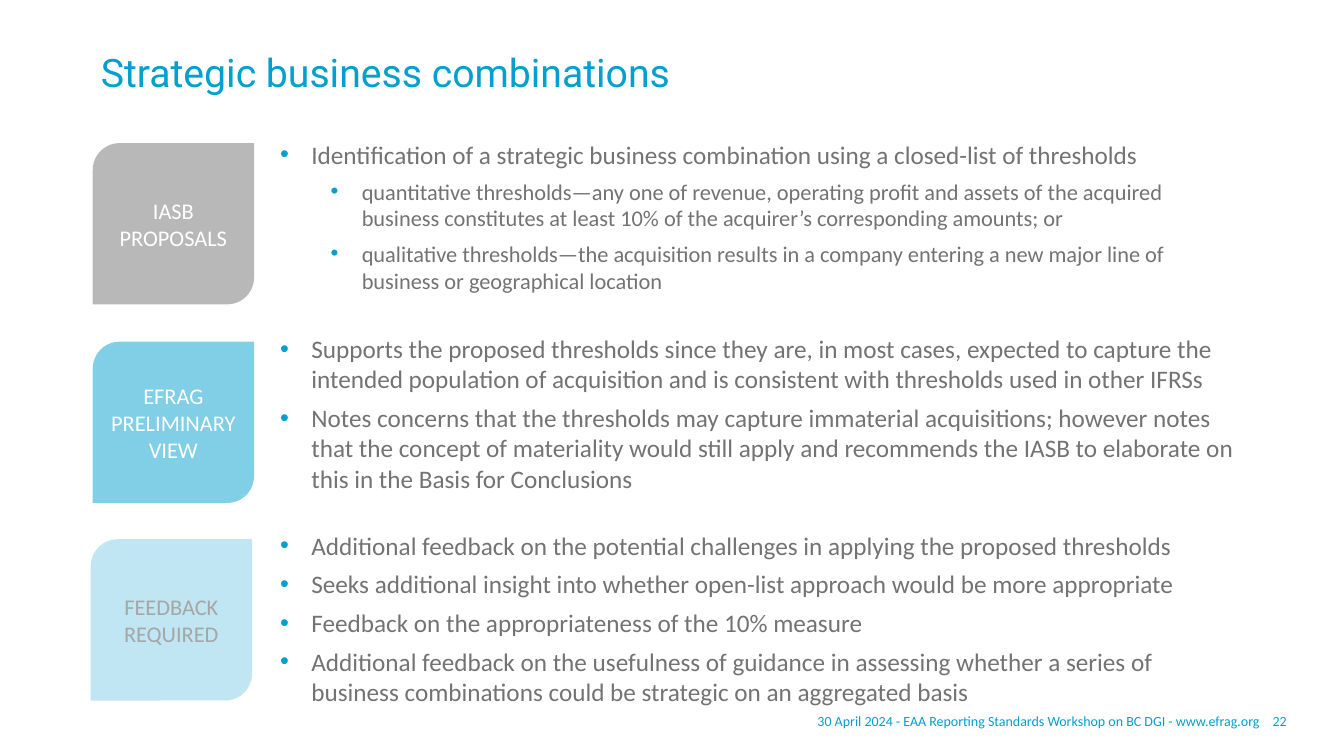
import pptx
import pptx.util
import pptx.dml.color
import pptx.enum.shapes
import pptx.enum.text
import pptx.oxml
import pptx.oxml.ns
import lxml.etree

Inches = pptx.util.Inches
Pt = pptx.util.Pt
RGBColor = pptx.dml.color.RGBColor
Align = pptx.enum.text.PP_ALIGN
Anchor = pptx.enum.text.MSO_ANCHOR
AutoSize = pptx.enum.text.MSO_AUTO_SIZE
qn = pptx.oxml.ns.qn

BLUE = RGBColor(0x02, 0xA0, 0xCE)
LIGHT_BLUE = RGBColor(0x80, 0xCF, 0xE6)
GREY = RGBColor(0x73, 0x73, 0x74)
PALE_GREY = RGBColor(0xA6, 0xA6, 0xA6)
WHITE = RGBColor(0xFF, 0xFF, 0xFF)

TITLE = "Strategic business combinations"
FOOTER = ["30 April 2024 - EAA Reporting Standards Workshop on BC DGI - ", "www.efrag.org"]
PAGE_NUMBER = "22"
SECTIONS = [
    {
        "label": ["IASB PROPOSALS"], "fill": GREY, "ink": WHITE,
        "tile": (0.92, 1.42), "body": (1.33, 9.21, 1.65),
        "bullets": [
            (0, "Identification of a strategic business combination using a closed-list of thresholds"),
            (1, "quantitative thresholds—any one of revenue, operating profit and assets of the acquired "
                "business constitutes at least 10% of the acquirer’s corresponding amounts; or"),
            (1, "qualitative thresholds—the acquisition results in a company entering a new major line of "
                "business or geographical location"),
        ],
    },
    {
        "label": ["EFRAG PRELIMINARY", "VIEW"], "fill": BLUE, "ink": WHITE,
        "tile": (0.92, 3.39), "body": (3.26, 9.72, 1.7),
        "bullets": [
            (0, "Supports the proposed thresholds since they are, in most cases, expected to capture the "
                "intended population of acquisition and is consistent with thresholds used in other IFRSs"),
            (0, "Notes concerns that the thresholds may capture immaterial acquisitions; however notes "
                "that the concept of materiality would still apply and recommends the IASB to elaborate on "
                "this in the Basis for Conclusions"),
        ],
    },
    {
        "label": ["FEEDBACK REQUIRED"], "fill": LIGHT_BLUE, "ink": PALE_GREY,
        "tile": (0.9, 5.35), "body": (5.21, 9.58, 1.87),
        "bullets": [
            (0, "Additional feedback on the potential challenges in applying the proposed thresholds"),
            (0, "Seeks additional insight into whether open-list approach would be more appropriate"),
            (0, "Feedback on the appropriateness of the 10% measure"),
            (0, "Additional feedback on the usefulness of guidance in assessing whether a series of "
                "business combinations could be strategic on an aggregated basis"),
        ],
    },
]

TILE_SIZE = 1.6
BODY_LEFT = 2.68
BULLET_SIZES = (18, 16)
BULLET_HANG = 0.31
LEVEL_STEP = 0.5
FOOTER_LEFT, FOOTER_SPLIT, FOOTER_RIGHT = 6.5, 12.59, 12.86
FOOTER_TOP, FOOTER_HEIGHT = 6.95, 0.4


def add_run(paragraph, text, size, color, font="Calibri"):
    run = paragraph.add_run()
    run.text = text
    run.font.name = font
    run.font.size = Pt(size)
    run.font.color.rgb = color


def paragraph_at(frame, index):
    return frame.add_paragraph() if index else frame.paragraphs[0]


def add_text_frame(slide, left, top, width, height):
    box = slide.shapes.add_textbox(Inches(left), Inches(top), Inches(width), Inches(height))
    box.text_frame.word_wrap = True
    return box.text_frame


def add_bullet(paragraph, level):
    properties = paragraph._p.get_or_add_pPr()
    properties.set("marL", str(Inches(BULLET_HANG + level * LEVEL_STEP)))
    properties.set("indent", str(-Inches(BULLET_HANG)))
    color = lxml.etree.SubElement(properties, qn("a:buClr"))
    lxml.etree.SubElement(color, qn("a:srgbClr"), val=str(BLUE))
    lxml.etree.SubElement(properties, qn("a:buFont"), typeface="Arial")
    lxml.etree.SubElement(properties, qn("a:buChar"), char="•")


def add_title(slide):
    title = slide.shapes.title
    title.left, title.top = Inches(0.9), Inches(0.42)
    title.width, title.height = Inches(11.5), Inches(0.65)
    frame = title.text_frame
    frame.auto_size = AutoSize.NONE
    frame.vertical_anchor = Anchor.MIDDLE
    paragraph = frame.paragraphs[0]
    paragraph.alignment = Align.LEFT
    paragraph.line_spacing = 0.9
    add_run(paragraph, TITLE, 28, BLUE, "Roboto")


def add_tile(slide, section):
    left, top = section["tile"]
    tile = slide.shapes.add_shape(
        pptx.enum.shapes.MSO_SHAPE.ROUND_2_DIAG_RECTANGLE,
        Inches(left), Inches(top), Inches(TILE_SIZE), Inches(TILE_SIZE))
    tile.shadow.inherit = False
    tile.line.fill.background()
    tile.fill.solid()
    tile.fill.fore_color.rgb = section["fill"]
    color = tile._element.spPr.find(qn("a:solidFill")).find(qn("a:srgbClr"))
    lxml.etree.SubElement(color, qn("a:alpha"), val="50000")
    frame = tile.text_frame
    frame.word_wrap = True
    frame.vertical_anchor = Anchor.MIDDLE
    for index, text in enumerate(section["label"]):
        paragraph = paragraph_at(frame, index)
        paragraph.alignment = Align.CENTER
        add_run(paragraph, text, 16, section["ink"])


def add_body(slide, section):
    top, width, height = section["body"]
    frame = add_text_frame(slide, BODY_LEFT, top, width, height)
    frame.auto_size = AutoSize.SHAPE_TO_FIT_TEXT
    for index, (level, text) in enumerate(section["bullets"]):
        paragraph = paragraph_at(frame, index)
        paragraph.level = level
        paragraph.space_before = Pt(3 if index else 0)
        paragraph.space_after = Pt(3)
        add_bullet(paragraph, level)
        add_run(paragraph, text, BULLET_SIZES[level], GREY)


def add_footer_part(slide, left, right, texts):
    frame = add_text_frame(slide, left, FOOTER_TOP, right - left, FOOTER_HEIGHT)
    frame.margin_left = 0
    frame.vertical_anchor = Anchor.MIDDLE
    paragraph = frame.paragraphs[0]
    paragraph.alignment = Align.RIGHT
    for text in texts:
        add_run(paragraph, text, 10, BLUE)


def main():
    presentation = pptx.Presentation()
    presentation.slide_width = Inches(13.33)
    presentation.slide_height = Inches(7.5)
    slide = presentation.slides.add_slide(presentation.slide_layouts.get_by_name("Title Only"))
    add_footer_part(slide, FOOTER_LEFT, FOOTER_SPLIT, FOOTER)
    add_footer_part(slide, FOOTER_SPLIT, FOOTER_RIGHT, [PAGE_NUMBER])
    add_title(slide)
    for section in SECTIONS:
        add_tile(slide, section)
        add_body(slide, section)
    presentation.save("out.pptx")


if __name__ == "__main__":
    main()
